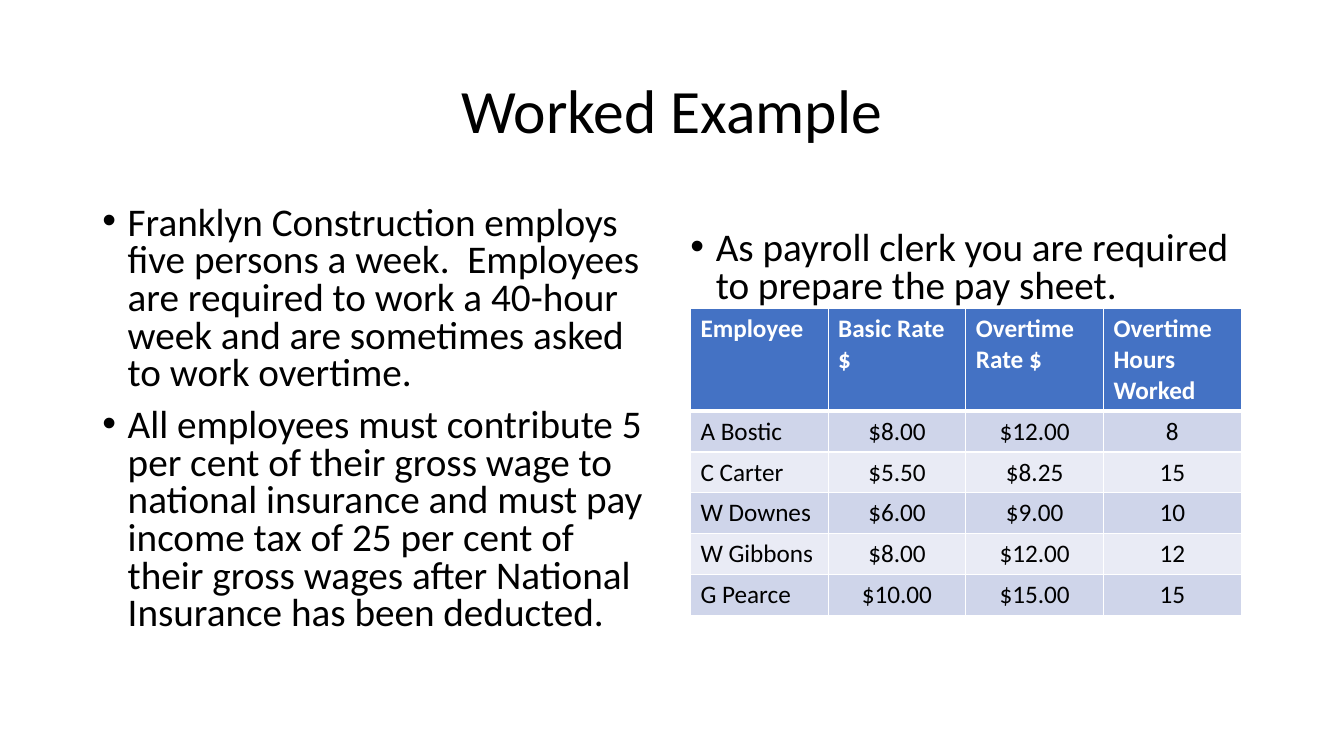
from lxml.etree import SubElement
from pptx import Presentation
from pptx.dml.color import RGBColor
from pptx.enum.text import MSO_ANCHOR as Anchor, PP_ALIGN as Align
from pptx.oxml.ns import qn
from pptx.util import Cm, Pt

FONT = "Calibri"
BLACK, WHITE = "000000", "FFFFFF"
HEADER_BLUE = "4472C4"
BANDS = ("CFD5EA", "E9EBF5")
COLUMN_WIDTH, HEADER_HEIGHT, ROW_HEIGHT = Cm(3.47), Cm(2.58), Cm(1.03)

DUTIES = [
    "Franklyn Construction employs five persons a week.  Employees are required "
    "to work a 40-hour week and are sometimes asked to work overtime.",
    "All employees must contribute 5 per cent of their gross wage to national "
    "insurance and must pay income tax of 25 per cent of their gross wages after "
    "National Insurance has been deducted.",
]
TASK = ["As payroll clerk you are required to prepare the pay sheet."]
PAY_RATES = [
    ("Employee", "Basic Rate $", "Overtime Rate $", "Overtime Hours Worked"),
    ("A Bostic", "$8.00", "$12.00", "8"),
    ("C Carter", "$5.50", "$8.25", "15"),
    ("W Downes", "$6.00", "$9.00", "10"),
    ("W Gibbons", "$8.00", "$12.00", "12"),
    ("G Pearce", "$10.00", "$15.00", "15"),
]


def rgb(value):
    return RGBColor.from_string(value)


def style(paragraph, size, color=BLACK, bold=False, align=Align.LEFT):
    paragraph.alignment = align
    font = paragraph.font
    font.name, font.size, font.bold = FONT, Pt(size), bold
    font.color.rgb = rgb(color)


def add_text_frame(slide, left, top, width, height):
    frame = slide.shapes.add_textbox(Cm(left), Cm(top), Cm(width), Cm(height)).text_frame
    frame.word_wrap = True
    return frame


def add_title(slide, text):
    frame = add_text_frame(slide, 2.33, 1.01, 29.21, 3.68)
    frame.vertical_anchor = Anchor.MIDDLE
    title = frame.paragraphs[0]
    title.text = text
    title.line_spacing = 0.9
    style(title, 44, align=Align.CENTER)


def add_bullets(slide, left, top, items):
    frame = add_text_frame(slide, left, top, 14.4, 12.09)
    for index, item in enumerate(items):
        point = frame.add_paragraph() if index else frame.paragraphs[0]
        point.text = item
        point.line_spacing = 0.8
        point.space_before = Pt(10)
        style(point, 28)
        properties = point._p.get_or_add_pPr()
        indent = Cm(0.64)
        properties.set("marL", str(indent))
        properties.set("indent", str(-indent))
        bullet_font = SubElement(properties, qn("a:buFont"))
        bullet_font.set("typeface", "Arial")
        SubElement(properties, qn("a:buChar")).set("char", "•")
        properties.append(properties.find(qn("a:defRPr")))


def add_borders(cell, bottom):
    properties = cell._tc.get_or_add_tcPr()
    for side, width in (("L", 1), ("R", 1), ("T", 1), ("B", bottom)):
        border = SubElement(properties, qn(f"a:ln{side}"), w=str(Pt(width)))
        fill = SubElement(border, qn("a:solidFill"))
        SubElement(fill, qn("a:srgbClr"), val=WHITE)


def fill_cell(cell, text, row, column):
    header = row == 0
    add_borders(cell, 3 if header else 1)
    cell.fill.solid()
    cell.fill.fore_color.rgb = rgb(HEADER_BLUE if header else BANDS[(row - 1) % 2])
    cell.text = text
    style(
        cell.text_frame.paragraphs[0],
        18,
        WHITE if header else BLACK,
        header,
        Align.LEFT if header or column == 0 else Align.CENTER,
    )


def add_pay_table(slide, left, top, rates):
    rows, columns = len(rates), len(rates[0])
    table = slide.shapes.add_table(
        rows, columns, Cm(left), Cm(top),
        COLUMN_WIDTH * columns, HEADER_HEIGHT + ROW_HEIGHT * (rows - 1),
    ).table
    for column in table.columns:
        column.width = COLUMN_WIDTH
    for row, values in enumerate(rates):
        table.rows[row].height = ROW_HEIGHT if row else HEADER_HEIGHT
        for column, value in enumerate(values):
            fill_cell(table.cell(row, column), value, row, column)


def main():
    deck = Presentation()
    deck.slide_width, deck.slide_height = Cm(33.87), Cm(19.05)
    slide = deck.slides.add_slide(deck.slide_layouts[6])
    add_title(slide, "Worked Example")
    add_bullets(slide, 2.33, 5.07, DUTIES)
    add_bullets(slide, 17.15, 5.71, TASK)
    add_pay_table(slide, 17.4, 7.78, PAY_RATES)
    deck.save("out.pptx")


if __name__ == "__main__":
    main()
